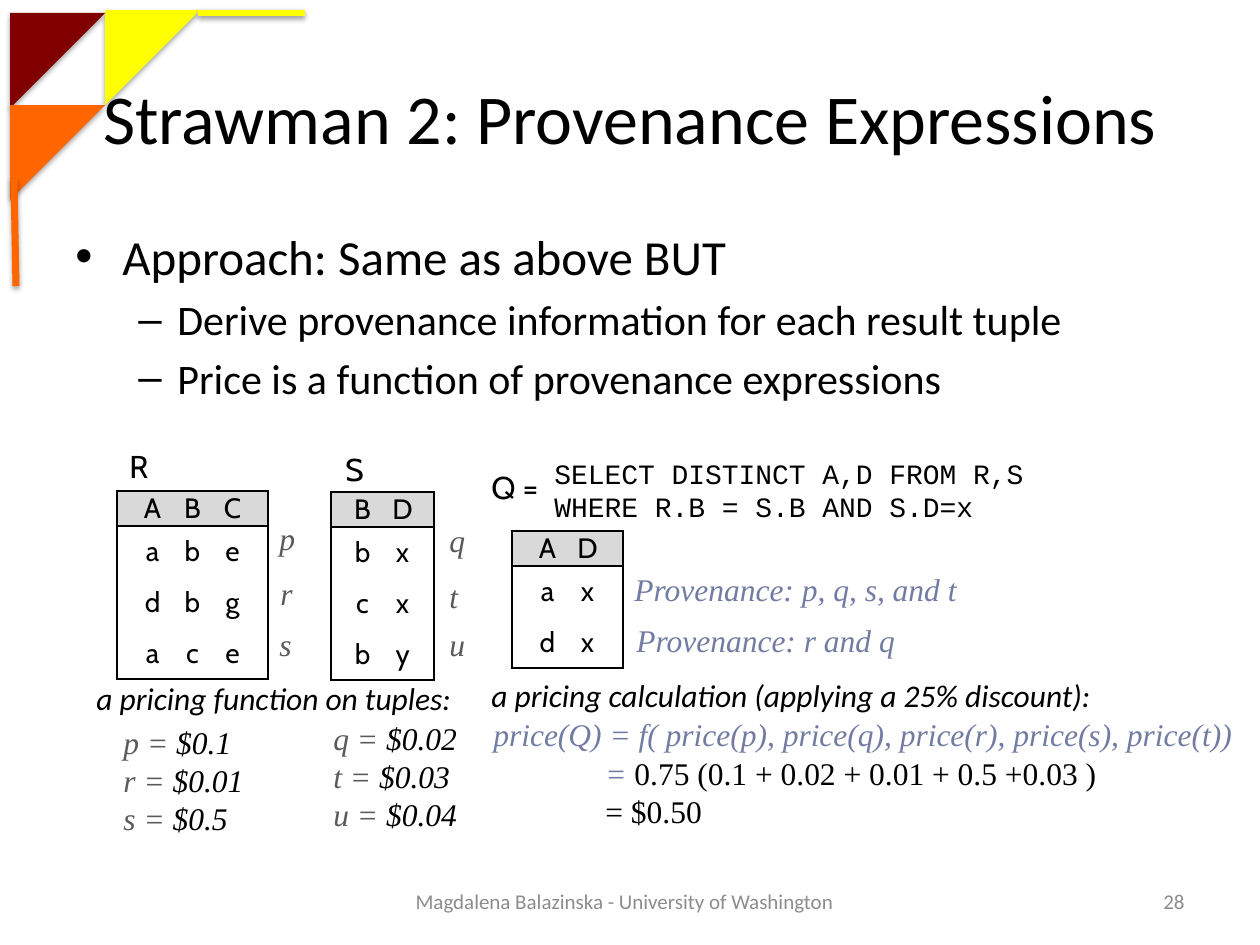
from lxml.etree import SubElement
from pptx import Presentation
from pptx.dml.color import RGBColor
from pptx.enum.shapes import MSO_CONNECTOR, MSO_SHAPE
from pptx.enum.text import MSO_ANCHOR, PP_ALIGN
from pptx.oxml.ns import qn
from pptx.util import Emu, Pt

BLACK, GREY, SLATE, PALE, FOOT = "000000", "5A5A5A", "727CA3", "D9D9D9", "8C8C8C"
MAROON, ORANGE, YELLOW = "800000", "FF6600", "FFFF00"
SANS, TABLE_FONT, MONO, SERIF = "Calibri", "Cabin", "Courier New", "Times New Roman"


def px(length):
    """Turn px, 126 to the inch, into EMU."""
    return Emu(round(length * 914400 / 126))


def rgb(color):
    return RGBColor.from_string(color)


def add_shadow(properties, alpha, distance):
    """Put a soft downward shadow on a shape's spPr."""
    effects = properties.find(qn("a:effectLst"))
    if effects is None:
        effects = SubElement(properties, qn("a:effectLst"))
    outer = SubElement(effects, qn("a:outerShdw"), blurRad=str(Pt(3.1)),
                       dist=str(Pt(distance)), dir="5400000", rotWithShape="0")
    shade = SubElement(outer, qn("a:srgbClr"), val=BLACK)
    SubElement(shade, qn("a:alpha"), val=str(alpha * 1000))


def set_borders(cell, drawn):
    """Draw the named sides (L, R, T, B) of a cell and clear the others."""
    properties = cell._tc.get_or_add_tcPr()
    for position, side in enumerate("LRTB"):
        border = SubElement(properties, qn(f"a:ln{side}"), w=str(Pt(1.5)))
        if side in drawn:
            fill = SubElement(border, qn("a:solidFill"))
            SubElement(fill, qn("a:srgbClr"), val=BLACK)
        else:
            SubElement(border, qn("a:noFill"))
        properties.insert(position, border)


class SlideBuilder:
    def __init__(self, slide):
        self.slide = slide
        self.shapes = slide.shapes

    def add_runs(self, paragraph, runs, size, font, color=BLACK, italic=False):
        """Add runs; each is a text, or a (text, color, italic) tuple."""
        for item in runs:
            text, run_color, run_italic = (
                (item, color, italic) if isinstance(item, str) else item)
            run = paragraph.add_run()
            run.text = text
            run.font.size = Pt(size)
            run.font.name = font
            run.font.italic = run_italic
            run.font.color.rgb = rgb(run_color)

    def title(self, box, text):
        title = self.shapes.title
        title.left, title.top, title.width, title.height = map(px, box)
        title.text_frame.vertical_anchor = MSO_ANCHOR.MIDDLE
        paragraph = title.text_frame.paragraphs[0]
        paragraph.alignment = PP_ALIGN.CENTER
        self.add_runs(paragraph, [text], 40, SANS)

    def text(self, box, lines, size=18, font=SERIF, color=BLACK, italic=False,
             align=PP_ALIGN.LEFT, anchor=MSO_ANCHOR.TOP, wrap=False):
        frame = self.shapes.add_textbox(*map(px, box)).text_frame
        frame.word_wrap = wrap
        frame.vertical_anchor = anchor
        for number, runs in enumerate(lines):
            paragraph = frame.add_paragraph() if number else frame.paragraphs[0]
            paragraph.alignment = align
            self.add_runs(paragraph, runs, size, font, color, italic)

    def bullets(self, box, items):
        """Add (level, text) items as a bulleted outline."""
        styles = [(28, 47, 47, "•"), (24, 102, 39, "–")]
        frame = self.shapes.add_textbox(*map(px, box)).text_frame
        frame.word_wrap = True
        for number, (level, text) in enumerate(items):
            size, margin, hang, mark = styles[level]
            paragraph = frame.add_paragraph() if number else frame.paragraphs[0]
            paragraph.level = level
            paragraph.space_before = Pt(size * 0.2)
            properties = paragraph._p.get_or_add_pPr()
            properties.set("marL", str(px(margin)))
            properties.set("indent", str(px(-hang)))
            SubElement(properties, qn("a:buFont"), typeface="Arial")
            SubElement(properties, qn("a:buChar"), char=mark)
            self.add_runs(paragraph, [text], size, SANS)

    def triangle(self, left, top, color):
        triangle = self.shapes.add_shape(
            MSO_SHAPE.RIGHT_TRIANGLE, px(left), px(top), px(95), px(95))
        triangle.rotation = 90
        triangle.fill.solid()
        triangle.fill.fore_color.rgb = rgb(color)
        triangle.line.fill.background()
        triangle.shadow.inherit = False
        add_shadow(triangle._element.spPr, 35, 1.8)

    def line(self, ends, color):
        line = self.shapes.add_connector(MSO_CONNECTOR.STRAIGHT, *map(px, ends))
        line.line.color.rgb = rgb(color)
        line.line.width = Pt(4)
        add_shadow(line._element.spPr, 38, 1.6)

    def relation(self, left, top, width, rows):
        """Add a table of one-letter columns, 40 px apart, centred in its width."""
        count, step, header, body = len(rows[0]), 40, 35, 51
        pad = (width - count * step) / 2
        height = header + body * (len(rows) - 1)
        table = self.shapes.add_table(
            len(rows), count, px(left), px(top), px(width), px(height)).table
        table.first_row = table.horz_banding = False
        for index, column in enumerate(table.columns):
            column.width = px(step + pad * ((index == 0) + (index == count - 1)))
        for row, letters in enumerate(rows):
            table.rows[row].height = px(body if row else header)
            for index, letter in enumerate(letters):
                first, last = index == 0, index == count - 1
                cell = table.cell(row, index)
                cell.margin_left = px(pad if first else 0)
                cell.margin_right = px(pad if last else 0)
                cell.margin_top = cell.margin_bottom = 0
                cell.vertical_anchor = MSO_ANCHOR.MIDDLE
                if row:
                    cell.fill.background()
                else:
                    cell.fill.solid()
                    cell.fill.fore_color.rgb = rgb(PALE)
                sides = "L" * first + "R" * last
                sides += "T" * (row < 2) + "B" * (row in (0, len(rows) - 1))
                set_borders(cell, sides)
                paragraph = cell.text_frame.paragraphs[0]
                paragraph.alignment = PP_ALIGN.CENTER
                self.add_runs(paragraph, [letter], 16, TABLE_FONT)


def prices(pairs):
    return [[(f"{name} = ", GREY, True), (price, BLACK, True)]
            for name, price in pairs]


def main():
    deck = Presentation()
    deck.slide_width, deck.slide_height = px(1260), px(945)
    page = SlideBuilder(deck.slides.add_slide(deck.slide_layouts[5]))

    page.triangle(10, 13, MAROON)
    page.triangle(10, 105, ORANGE)
    page.triangle(105, 10, YELLOW)
    page.line((14, 179, 16, 286), ORANGE)
    page.line((198, 13, 305, 13), YELLOW)

    page.title((63, 38, 1134, 157), "Strawman 2: Provenance Expressions")
    page.bullets((63, 220, 1165, 200), [
        (0, "Approach: Same as above BUT"),
        (1, "Derive provenance information for each result tuple"),
        (1, "Price is a function of provenance expressions")])

    page.relation(117, 491, 151, ["ABC", "abe", "dbg", "ace"])
    page.relation(331, 492, 103, ["BD", "bx", "cx", "by"])
    page.relation(512, 531, 111, ["AD", "ax", "dx"])
    for left, top, width, label in [
            (117, 441, 48, "R"), (333, 444, 47, "S"), (479, 462, 77, "Q =")]:
        page.text((left, top, width, 50), [[label]], font=TABLE_FONT)

    for left, top, width, tuple_name in [
            (267, 513, 42, "p"), (268, 568, 38, "r"), (267, 619, 38, "s"),
            (437, 515, 42, "q"), (437, 571, 34, "t"), (437, 619, 42, "u")]:
        page.text((left, top, width, 50), [[tuple_name]], color=GREY, italic=True)

    page.text((542, 450, 504, 81),
              [["SELECT DISTINCT A,D FROM R,S"], ["WHERE R.B = S.B AND S.D=x"]],
              size=16, font=MONO, wrap=True)
    page.text((622, 564, 362, 50), [["Provenance: p, q, s, and t"]],
              color=SLATE, italic=True)
    page.text((624, 615, 297, 50), [["Provenance: r and q"]],
              color=SLATE, italic=True)

    page.text((84, 673, 384, 50), [["a pricing function on tuples:"]],
              font=SANS, italic=True)
    page.text((111, 717, 145, 126),
              prices([("p", "$0.1"), ("r", "$0.01"), ("s", "$0.5")]))
    page.text((321, 713, 150, 126),
              prices([("q", "$0.02"), ("t", "$0.03"), ("u", "$0.04")]))

    page.text((479, 670, 639, 50),
              [["a pricing calculation (applying a 25% discount):"]],
              font=SANS, italic=True)
    page.text((481, 709, 779, 50),
              [["price(Q) = f( price(p), price(q), price(r), price(s), price(t))"]],
              color=SLATE, italic=True, wrap=True)
    page.text((593, 748, 615, 89),
              [[("= ", SLATE, True), "0.75 (0.1 + 0.02 + 0.01 + 0.5 +0.03 )"],
               ["= $0.50"]], wrap=True)

    for left, width, note, align in [
            (388, 473, "Magdalena Balazinska - University of Washington",
             PP_ALIGN.CENTER),
            (903, 294, "28", PP_ALIGN.RIGHT)]:
        page.text((left, 876, width, 50), [[note]], size=12, font=SANS, color=FOOT,
                  align=align, anchor=MSO_ANCHOR.MIDDLE, wrap=True)

    deck.save("out.pptx")


if __name__ == "__main__":
    main()
